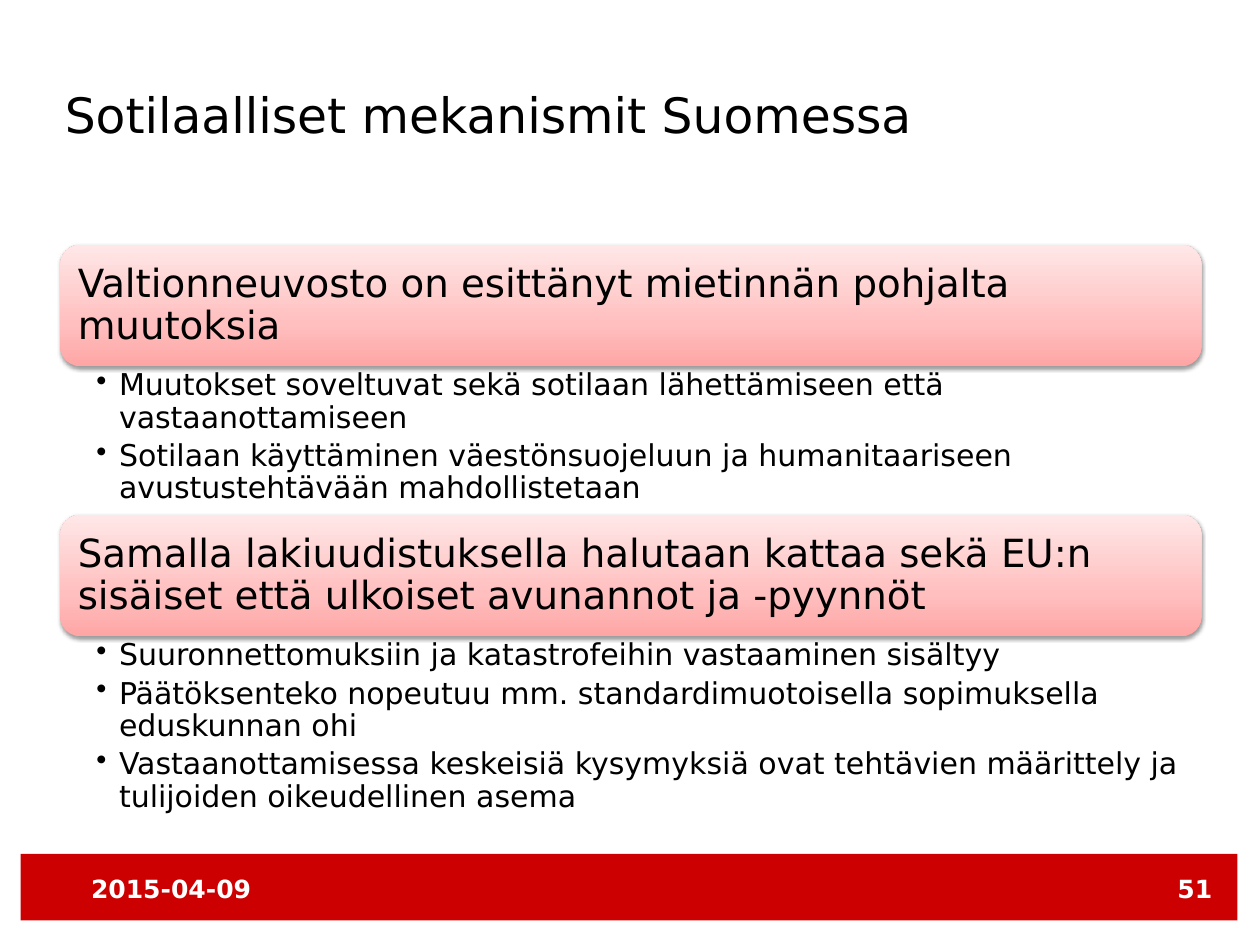
from copy import deepcopy
from dataclasses import dataclass

from lxml.etree import SubElement
from pptx import Presentation
from pptx.dml.color import RGBColor as Rgb
from pptx.enum.shapes import MSO_SHAPE as Shape
from pptx.enum.text import MSO_ANCHOR as Anchor, MSO_AUTO_SIZE as AutoSize
from pptx.oxml.ns import qn
from pptx.util import Cm, Pt


@dataclass(frozen=True)
class Theme:
    font: str = "DejaVu Sans"
    ink: str = "000000"
    paper: str = "FFFFFF"
    footer: str = "CC0000"
    # Gradient stops run from the bottom of a banner to its top
    banner: tuple = ((0, "FFA5A5"), (0.35, "FFBFBF"), (1, "FFE7E7"))
    title_size: int = 39
    banner_size: int = 31
    detail_size: int = 24
    footer_size: int = 20


THEME = Theme()

LEFT, WIDTH, TOP = 1.7, 32.21, 6.91
BANNER_HEIGHT = 3.43

# Heading, height of its details, details
SECTIONS = [
    ("Valtionneuvosto on esittänyt mietinnän pohjalta muutoksia", 4.19, [
        "Muutokset soveltuvat sekä sotilaan lähettämiseen että vastaanottamiseen",
        "Sotilaan käyttäminen väestönsuojeluun ja humanitaariseen "
        "avustustehtävään mahdollistetaan",
    ]),
    ("Samalla lakiuudistuksella halutaan kattaa sekä EU:n sisäiset että "
     "ulkoiset avunannot ja -pyynnöt", 5.36, [
        "Suuronnettomuksiin ja katastrofeihin vastaaminen sisältyy",
        "Päätöksenteko nopeutuu mm. standardimuotoisella sopimuksella "
        "eduskunnan ohi",
        "Vastaanottamisessa keskeisiä kysymyksiä ovat tehtävien määrittely ja "
        "tulijoiden oikeudellinen asema",
    ]),
]


def apply(target, settings):
    for name, value in settings.items():
        setattr(target, name, value)


def set_frame(frame, insets, **settings):
    sides = ("margin_left", "margin_top", "margin_right", "margin_bottom")
    apply(frame, dict(zip(sides, map(Cm, insets))))
    apply(frame, {"word_wrap": True, **settings})


def write(paragraph, text, size, color=THEME.ink, bold=False):
    run = paragraph.add_run()
    run.text = text
    apply(run.font, {"name": THEME.font, "size": Pt(size), "bold": bold})
    run.font.color.rgb = Rgb.from_string(color)


def add_label(slide, box, text, size, insets, color=THEME.ink, bold=False,
              **settings):
    frame = slide.shapes.add_textbox(*map(Cm, box)).text_frame
    set_frame(frame, insets, **settings)
    write(frame.paragraphs[0], text, size, color, bold)


def add_plain_shape(slide, kind, box):
    shape = slide.shapes.add_shape(kind, *map(Cm, box))
    shape.shadow.inherit = False
    shape.line.fill.background()
    return shape


def fill_gradient(shape, stops):
    shape.fill.gradient()
    shape.fill.gradient_angle = 90
    stop_list = shape._element.spPr.find(".//" + qn("a:gsLst"))
    while len(stop_list) < len(stops):
        stop_list.append(deepcopy(stop_list[0]))
    for stop, (position, color) in zip(shape.fill.gradient_stops, stops):
        stop.position = position
        stop.color.rgb = Rgb.from_string(color)


def add_soft_shadow(shape):
    effects = shape._element.spPr.find(qn("a:effectLst"))
    shadow = SubElement(effects, qn("a:outerShdw"), blurRad=str(Pt(3.1)),
                        dist=str(Pt(1.6)), dir="5400000", rotWithShape="0")
    color = SubElement(shadow, qn("a:srgbClr"), val=THEME.ink)
    SubElement(color, qn("a:alpha"), val="38000")


def add_banner(slide, top, heading):
    banner = add_plain_shape(slide, Shape.ROUNDED_RECTANGLE,
                             (LEFT, top, WIDTH, BANNER_HEIGHT))
    fill_gradient(banner, THEME.banner)
    add_soft_shadow(banner)
    set_frame(banner.text_frame, [0.33] * 4, vertical_anchor=Anchor.MIDDLE)
    paragraph = banner.text_frame.paragraphs[0]
    apply(paragraph, {"line_spacing": 0.9, "alignment": 1})
    write(paragraph, heading, THEME.banner_size)


def add_details(slide, top, height, details):
    frame = slide.shapes.add_textbox(
        *map(Cm, (LEFT, top, WIDTH, height))).text_frame
    set_frame(frame, (1.02, 0.1, 0.61, 0.1))
    for index, detail in enumerate(details):
        paragraph = frame.add_paragraph() if index else frame.paragraphs[0]
        properties = paragraph._p.get_or_add_pPr()
        properties.set("marL", str(Cm(0.64)))
        properties.set("indent", str(-Cm(0.64)))
        SubElement(properties, qn("a:buChar"), char="•")
        apply(paragraph, {"level": 1, "line_spacing": 0.9,
                          "space_after": Pt(4.8)})
        write(paragraph, detail, THEME.detail_size)


def add_footer(slide):
    band = add_plain_shape(slide, Shape.RECTANGLE, (0.58, 24.1, 34.34, 1.88))
    band.fill.solid()
    band.fill.fore_color.rgb = Rgb.from_string(THEME.footer)
    for left, width, text in ((2.21, 5.46, "2015-04-09"), (32.87, 2.11, "51")):
        add_label(slide, (left, 24.46, width, 1.22), text, THEME.footer_size,
                  (0.36, 0.18, 0.36, 0.18), THEME.paper, bold=True,
                  word_wrap=False, auto_size=AutoSize.SHAPE_TO_FIT_TEXT)


def main():
    deck = Presentation()
    apply(deck, {"slide_width": Cm(35.56), "slide_height": Cm(26.67)})
    slide = deck.slides.add_slide(deck.slide_layouts[6])

    # Footer and title
    add_footer(slide)
    add_label(slide, (1.83, 0.81, 25.63, 4.83),
              "Sotilaalliset mekanismit Suomessa", THEME.title_size, [0] * 4,
              vertical_anchor=Anchor.MIDDLE)

    # Sections stacked without gaps
    top = TOP
    for heading, details_height, details in SECTIONS:
        add_banner(slide, top, heading)
        top += BANNER_HEIGHT
        add_details(slide, top, details_height, details)
        top += details_height

    deck.save("out.pptx")


if __name__ == "__main__":
    main()
